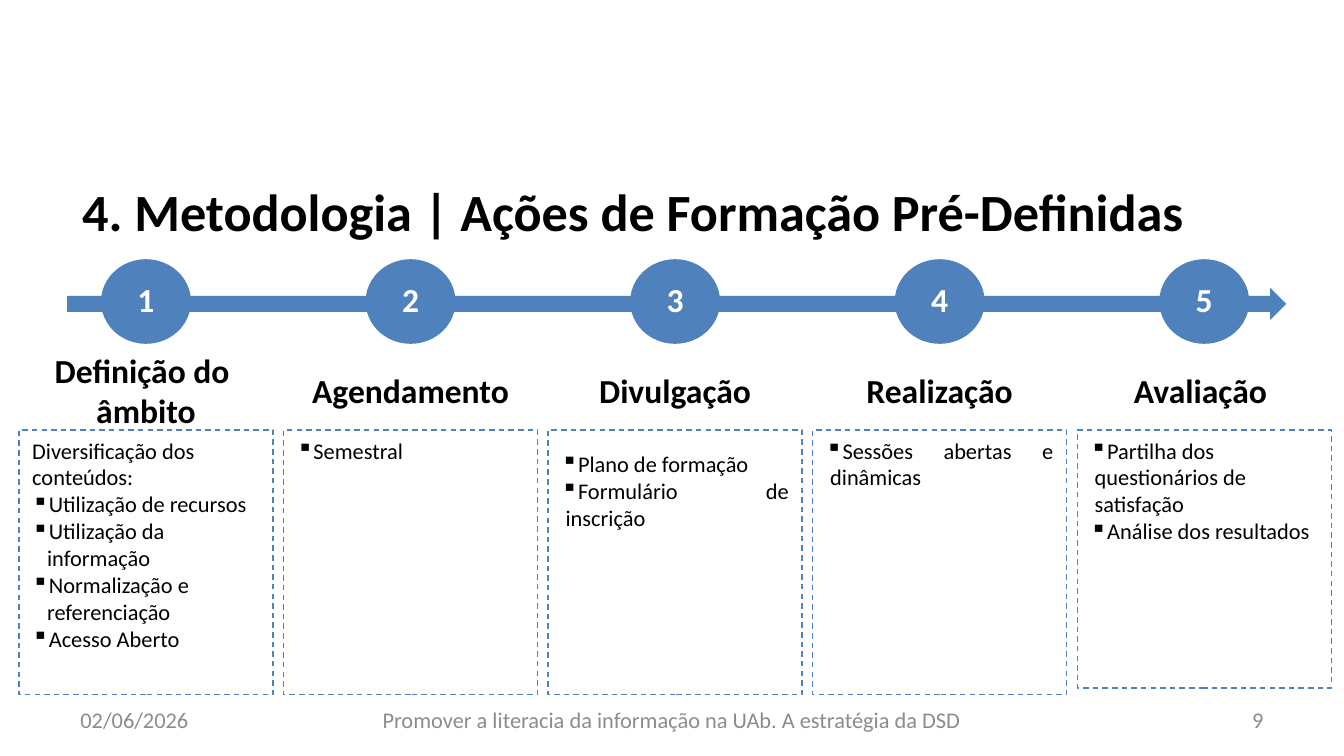
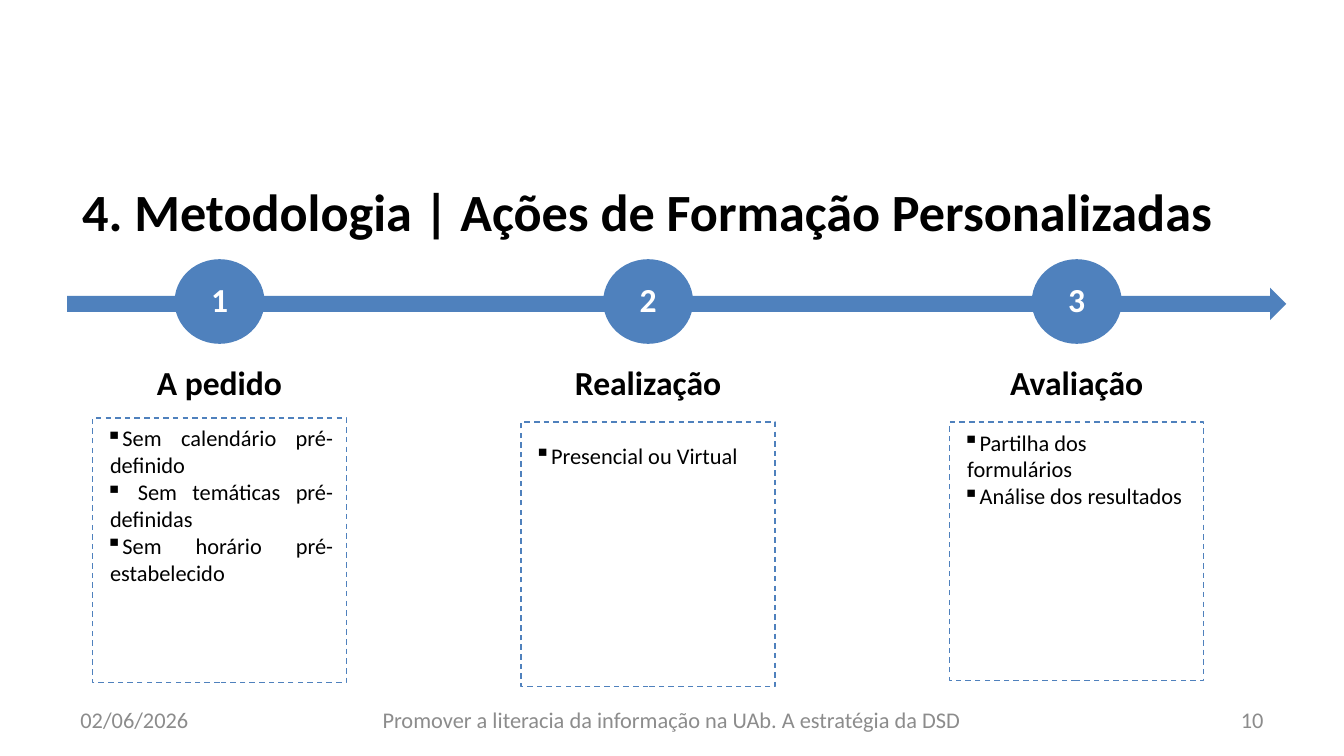
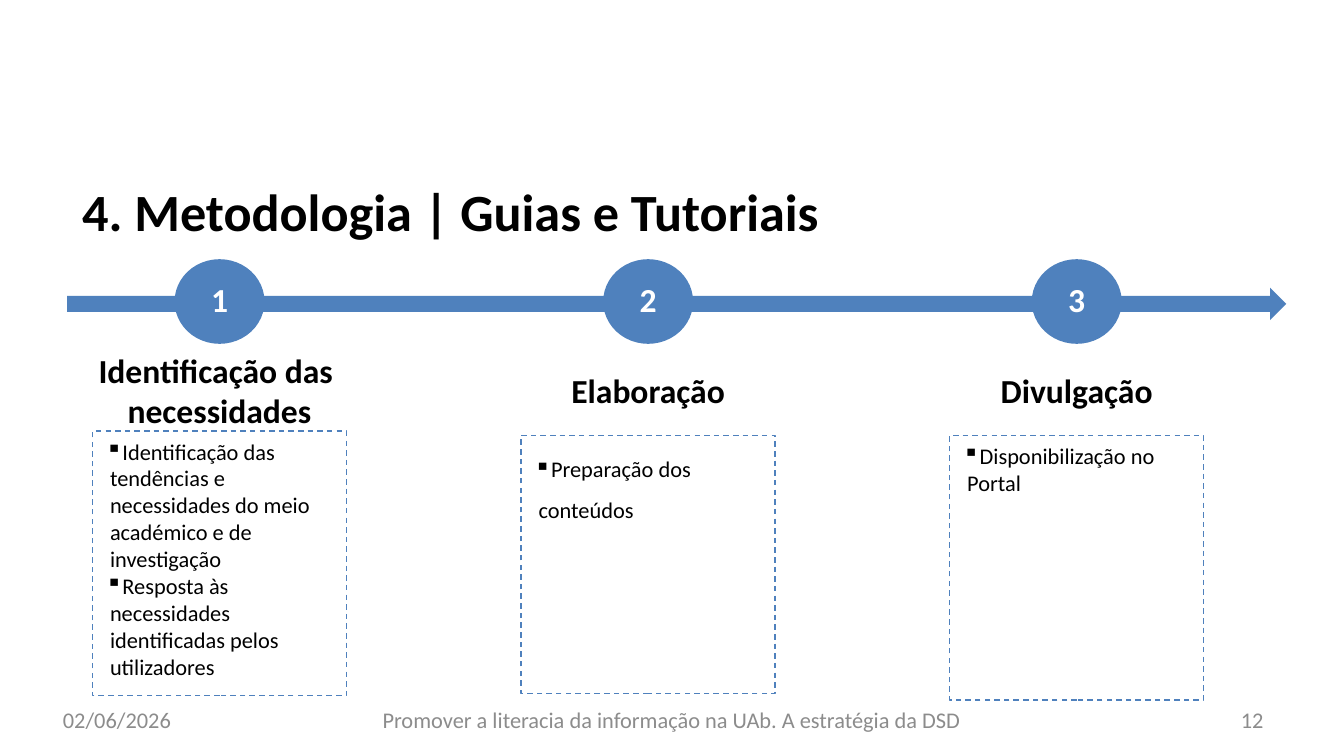
from dataclasses import dataclass

from lxml.etree import SubElement as Sub
from pptx import Presentation
from pptx.dml.color import RGBColor as Rgb
from pptx.enum.dml import MSO_LINE_DASH_STYLE as Dash
from pptx.enum.shapes import MSO_SHAPE as Kind
from pptx.enum.text import MSO_ANCHOR as Anchor, MSO_AUTO_SIZE as Fit, PP_ALIGN as Align
from pptx.oxml.ns import qn
from pptx.util import Cm, Pt

COLORS = {"blue": "4F81BD", "white": "FFFFFF", "black": "000000", "grey": "8C8C8C"}
FORMATS = {
    "title": {"size": Pt(28), "bold": True},
    "head": {"size": Pt(18), "bold": True},
    "body": {"size": Pt(12), "bold": False},
}
FOOTER = "Promover a literacia da informação na UAb. A estratégia da DSD"
DATE = "02/06/2026"
BOX_WIDTH = 4.8
LEFT, MID, RIGHT, JUST = Align.LEFT, Align.CENTER, Align.RIGHT, Align.JUSTIFY


@dataclass
class Step:
    head: tuple
    width: float
    items: tuple
    top: float
    high: float = 5.0
    align: Align = LEFT
    fill: str = ""
    lead: float = 1.0
    intro: str = ""
    indent: tuple = (0.08, -0.71)


class Deck:
    def __init__(self):
        self.prs = Presentation()
        self.prs.slide_width, self.prs.slide_height = Cm(25.4), Cm(14.29)
        self.slide = None

    def start(self, title, width):
        self.slide = self.prs.slides.add_slide(self.prs.slide_layouts[5])
        shape = self.slide.shapes.title
        spot = {"left": 0.03, "top": 3.25, "width": width, "height": 1.45}
        for name, value in spot.items():
            setattr(shape, name, Cm(value))
        shape.text_frame.auto_size = Fit.NONE
        par = self.put(shape, [title], "title")[0]
        self.inset(par, 1.27, 0)

    def put(self, shape, lines, style, color="black", align=LEFT, anchor=Anchor.MIDDLE):
        """Fill the shape with one paragraph per line and return the paragraphs."""
        frame = shape.text_frame
        frame.vertical_anchor = anchor
        pars = [frame.paragraphs[0]] + [frame.add_paragraph() for _ in lines[1:]]
        for par, line in zip(pars, lines):
            par.alignment = align
            run = par.add_run()
            run.text = line
            run.font.name = "Calibri"
            run.font.color.rgb = Rgb.from_string(COLORS[color])
            for name, value in FORMATS[style].items():
                setattr(run.font, name, value)
        return pars

    def inset(self, par, margin, first):
        props = par._p.get_or_add_pPr()
        props.set("marL", str(Cm(margin)))
        props.set("indent", str(Cm(first)))
        return props

    def shape(self, kind, spot, fill="blue"):
        shape = self.slide.shapes.add_shape(kind, *map(Cm, spot))
        shape.shadow.inherit = False
        if fill:
            shape.fill.solid()
            shape.fill.fore_color.rgb = Rgb.from_string(COLORS[fill])
        else:
            shape.fill.background()
        shape.line.fill.background()
        return shape

    def label(self, spot, lines, style, color="black", align=MID, wrap=True):
        box = self.slide.shapes.add_textbox(*map(Cm, spot))
        box.text_frame.word_wrap = wrap
        self.put(box, lines, style, color, align)

    def disc(self, mid, number):
        disc = self.shape(Kind.OVAL, (mid - 0.85, 4.9, 1.7, 1.6))
        for side in ("left", "top", "right", "bottom"):
            setattr(disc.text_frame, f"margin_{side}", Cm(0.28))
        par = self.put(disc, [str(number)], "head", "white", MID)[0]
        par.line_spacing = 0.9

    def panel(self, mid, step):
        """Draw the dashed box with the bulleted list of a step."""
        spot = (mid - BOX_WIDTH / 2, step.top, BOX_WIDTH, step.high)
        box = self.shape(Kind.RECTANGLE, spot, step.fill)
        box.line.color.rgb = Rgb.from_string(COLORS["blue"])
        box.line.width, box.line.dash_style = Pt(0.75), Dash.DASH
        intro = [step.intro] if step.intro else []
        pars = self.put(box, intro + list(step.items), "body",
                        align=step.align, anchor=Anchor.TOP)
        for par in pars[len(intro):]:
            Sub(self.inset(par, *step.indent), qn("a:buChar"), char="▪")
        if step.lead != 1:
            pars[0].line_spacing = step.lead

    def flow(self, steps, first, gap, level):
        """Set the steps along the arrow, with the headings centred on level."""
        self.shape(Kind.RIGHT_ARROW, (1.27, 5.44, 23.04, 0.61))
        for i, step in enumerate(steps):
            mid = first + i * gap
            high = 1.02 if len(step.head) == 1 else 1.8
            self.disc(mid, i + 1)
            self.label((mid - step.width / 2, level - high / 2, step.width, high),
                       step.head, "head", wrap=False)
            self.panel(mid, step)

    def footer(self, number, left):
        for x, width, text, align in ((left, 5.92, DATE, LEFT), (6.6, 12.19, FOOTER, MID),
                                      (18.21, 5.92, str(number), RIGHT)):
            self.label((x, 13.23, width, 0.76), [text], "body", "grey", align)


PRESET = (
    Step(("Definição do ", "âmbito"), 3.99,
         ("Utilização de recursos", "Utilização da informação",
          "Normalização e referenciação", "Acesso Aberto"), 8.13,
         fill="white", intro="Diversificação dos conteúdos:", indent=(0.28, -0.58)),
    Step(("Agendamento",), 4.27, ("Semestral",), 8.13, align=JUST, fill="white"),
    Step(("Divulgação",), 3.4, ("Plano de formação", "Formulário de inscrição "), 8.13,
         align=JUST, fill="white", lead=1.5),
    Step(("Realização",), 3.3, ("Sessões abertas e dinâmicas",), 8.13, align=JUST),
    Step(("Avaliação ",), 3.2,
         ("Partilha dos questionários de satisfação", "Análise dos resultados"), 8.13, 4.88),
)
CUSTOM = (
    Step(("A pedido",), 2.9,
         ("Sem calendário pré-definido", " Sem temáticas pré-definidas",
          "Sem horário pré-estabelecido"), 7.9, align=JUST),
    Step(("Realização",), 3.3, ("Presencial ou Virtual",), 7.98, align=JUST, lead=1.5),
    Step(("Avaliação",), 3.05, ("Partilha dos formulários", "Análise dos resultados"),
         7.98, 4.88),
)
GUIDES = (
    Step(("Identificação das ", "necessidades"), 5.13,
         ("Identificação das tendências e necessidades do meio académico e de investigação",
          "Resposta às necessidades identificadas pelos utilizadores"), 8.15),
    Step(("Elaboração",), 3.43, ("Preparação dos conteúdos",), 8.23, 4.88, lead=1.5),
    Step(("Divulgação",), 3.4, ("Disponibilização no Portal",), 8.23),
)
SLIDES = (
    ("Ações de Formação Pré-Definidas", 22.86, PRESET, 2.76, 5.0, 7.38, 9, 1.27),
    ("Ações de Formação Personalizadas", 23.39, CUSTOM, 4.15, 8.1, 7.22, 10, 1.27),
    ("Guias e Tutoriais", 15.88, GUIDES, 4.15, 8.1, 7.38, 12, 0.94),
)


def main():
    deck = Deck()
    for topic, width, steps, first, gap, level, number, left in SLIDES:
        deck.start(f"4. Metodologia | {topic}", width)
        deck.flow(steps, first, gap, level)
        deck.footer(number, left)
    deck.prs.save("out.pptx")


if __name__ == "__main__":
    main()
